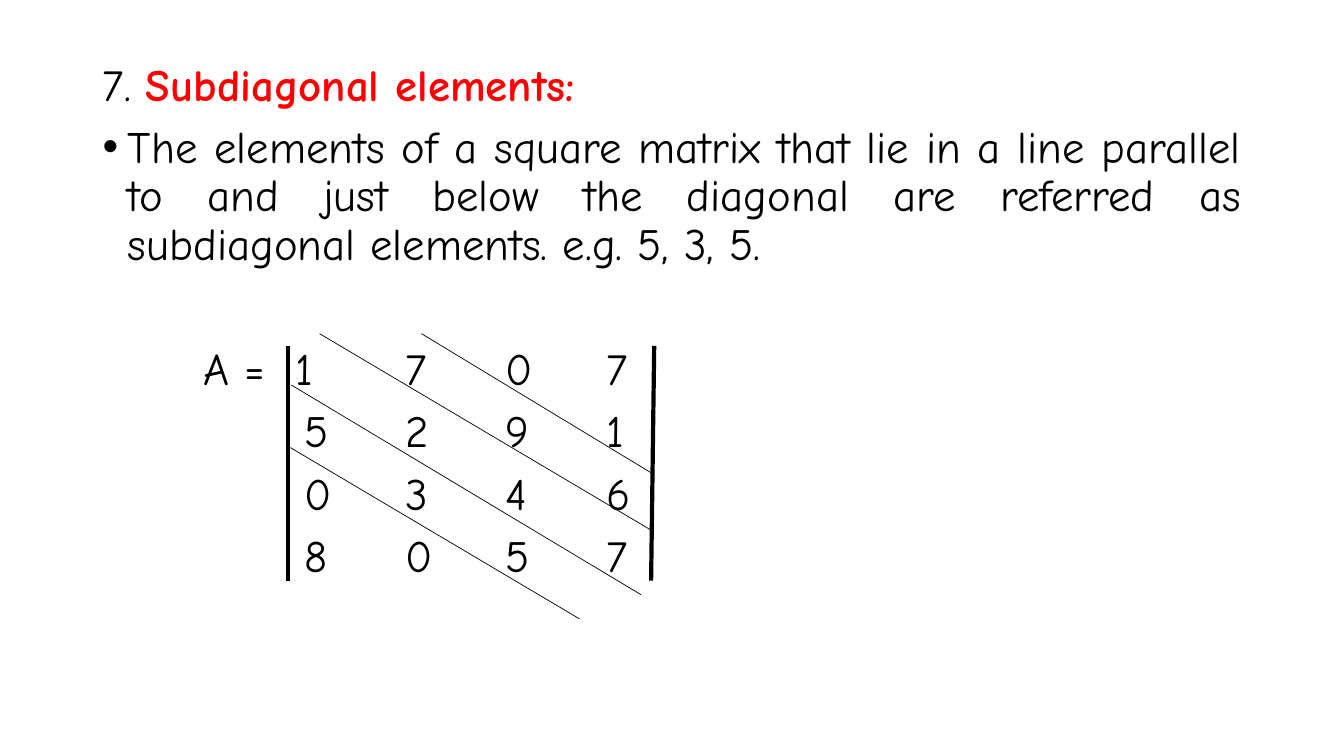
from dataclasses import dataclass

from lxml.etree import SubElement
from pptx import Presentation
from pptx.dml.color import RGBColor
from pptx.enum.shapes import MSO_CONNECTOR
from pptx.enum.text import MSO_ANCHOR, MSO_AUTO_SIZE, PP_ALIGN
from pptx.oxml.ns import qn
from pptx.util import Pt


@dataclass(frozen=True)
class Theme:
    font: str = "Comic Neue"
    size: float = 32
    text: RGBColor = RGBColor(0, 0, 0)
    accent: RGBColor = RGBColor(255, 0, 0)
    bar_width: float = 3
    diagonal_width: float = 0.5


@dataclass(frozen=True)
class Line:
    x1: float
    y1: float
    x2: float
    y2: float
    width: float


THEME = Theme()
LEFT, WIDTH = 66.24, 828
TITLE_TOP, TITLE_HEIGHT = 41, 42
BODY_TOP, BODY_HEIGHT = 85.6, 401
GAP, MATRIX_GAP = 10, 54.6
TAB, TAB_COUNT = 72, 5

DEFINITION = (
    "The elements of a square matrix that lie in a line parallel to and just "
    "below the diagonal are referred as subdiagonal elements. e.g. 5, 3, 5."
)
MATRIX_ROWS = [
    "\tA =  1\t7\t0\t7",
    "\t\t5\t2\t9\t1",
    "\t\t0\t3\t4\t6",
    "\t\t8\t0\t5\t7",
]
LINES = [
    # Bars at the sides of the matrix
    Line(205.92, 247, 205.92, 414.7, THEME.bar_width),
    Line(467.3, 247, 465.1, 414.7, THEME.bar_width),
    # Diagonals
    Line(228.2, 238.3, 465.1, 378.7, THEME.diagonal_width),
    Line(208.1, 275, 457.9, 424.8, THEME.diagonal_width),
    Line(207.4, 319.7, 414, 442.1, THEME.diagonal_width),
    Line(301, 238.3, 465.1, 337.7, THEME.diagonal_width),
]


def set_attributes(target, values: dict) -> None:
    for name, value in values.items():
        setattr(target, name, value)


def format_frame(tf) -> None:
    set_attributes(tf, {
        "word_wrap": True, "auto_size": MSO_AUTO_SIZE.NONE,
        "vertical_anchor": MSO_ANCHOR.TOP,
        "margin_left": Pt(7.2), "margin_right": Pt(7.2),
        "margin_top": Pt(3.6), "margin_bottom": Pt(3.6),
    })


def format_paragraph(p, align: PP_ALIGN, before: float) -> None:
    set_attributes(p, {"alignment": align, "line_spacing": 0.9,
                       "space_before": Pt(before), "space_after": Pt(0)})


def add_run(p, text: str, color: RGBColor = THEME.text, bold: bool = False) -> None:
    r = p.add_run()
    r.text = text
    set_attributes(r.font, {"name": THEME.font, "size": Pt(THEME.size), "bold": bold})
    r.font.color.rgb = color


def add_bullet(p) -> None:
    pPr = p._p.get_or_add_pPr()
    pPr.set("marL", str(Pt(18)))
    pPr.set("indent", str(Pt(-18)))
    SubElement(pPr, qn("a:buFont")).set("typeface", "Arial")
    SubElement(pPr, qn("a:buChar")).set("char", "•")


def add_tabs(p) -> None:
    tabs = SubElement(p._p.get_or_add_pPr(), qn("a:tabLst"))
    for i in range(1, TAB_COUNT + 1):
        tab = SubElement(tabs, qn("a:tab"))
        tab.set("pos", str(Pt(TAB * i)))
        tab.set("algn", "l")


def add_title(s) -> None:
    sp = s.shapes.title
    set_attributes(sp, {"left": Pt(LEFT), "top": Pt(TITLE_TOP),
                        "width": Pt(WIDTH), "height": Pt(TITLE_HEIGHT)})
    format_frame(sp.text_frame)
    p = sp.text_frame.paragraphs[0]
    format_paragraph(p, PP_ALIGN.JUSTIFY, 0)
    add_run(p, "7. ")
    add_run(p, "Subdiagonal elements:", THEME.accent, True)


def add_body(s) -> None:
    sp = s.shapes.add_textbox(Pt(LEFT), Pt(BODY_TOP), Pt(WIDTH), Pt(BODY_HEIGHT))
    tf = sp.text_frame
    format_frame(tf)
    p = tf.paragraphs[0]
    format_paragraph(p, PP_ALIGN.JUSTIFY, 0)
    add_bullet(p)
    add_run(p, DEFINITION)
    for i, row in enumerate(MATRIX_ROWS):
        p = tf.add_paragraph()
        format_paragraph(p, PP_ALIGN.LEFT, GAP if i else MATRIX_GAP)
        add_tabs(p)
        add_run(p, row)


def add_line(s, line: Line) -> None:
    c = s.shapes.add_connector(MSO_CONNECTOR.STRAIGHT, Pt(line.x1), Pt(line.y1),
                               Pt(line.x2), Pt(line.y2))
    c.line.color.rgb = THEME.text
    c.line.width = Pt(line.width)
    SubElement(c._element.spPr, qn("a:effectLst"))


def main() -> None:
    prs = Presentation()
    prs.slide_width, prs.slide_height = Pt(960), Pt(540)
    s = prs.slides.add_slide(prs.slide_layouts[5])
    add_title(s)
    add_body(s)
    for line in LINES:
        add_line(s, line)
    prs.save("out.pptx")


if __name__ == "__main__":
    main()
